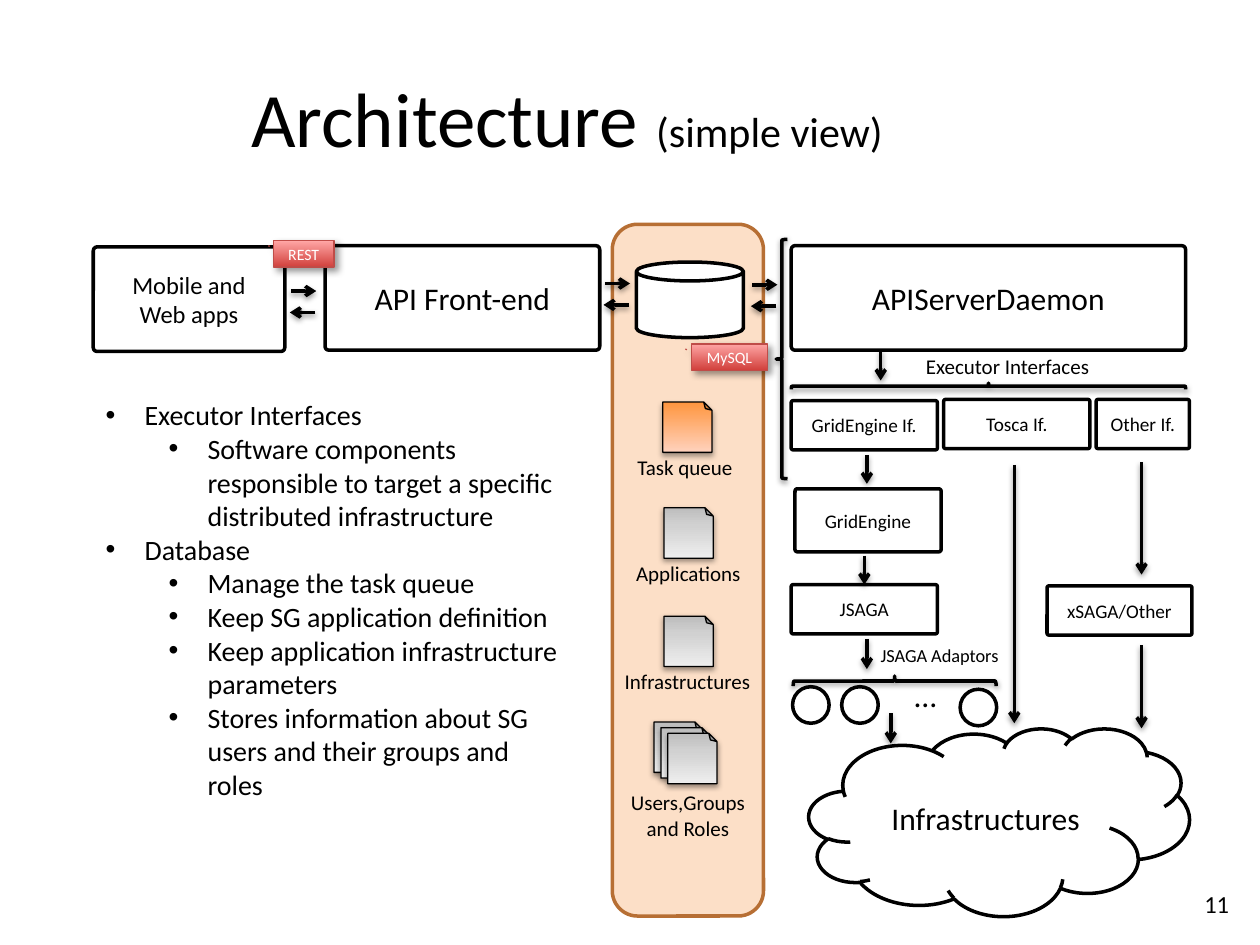
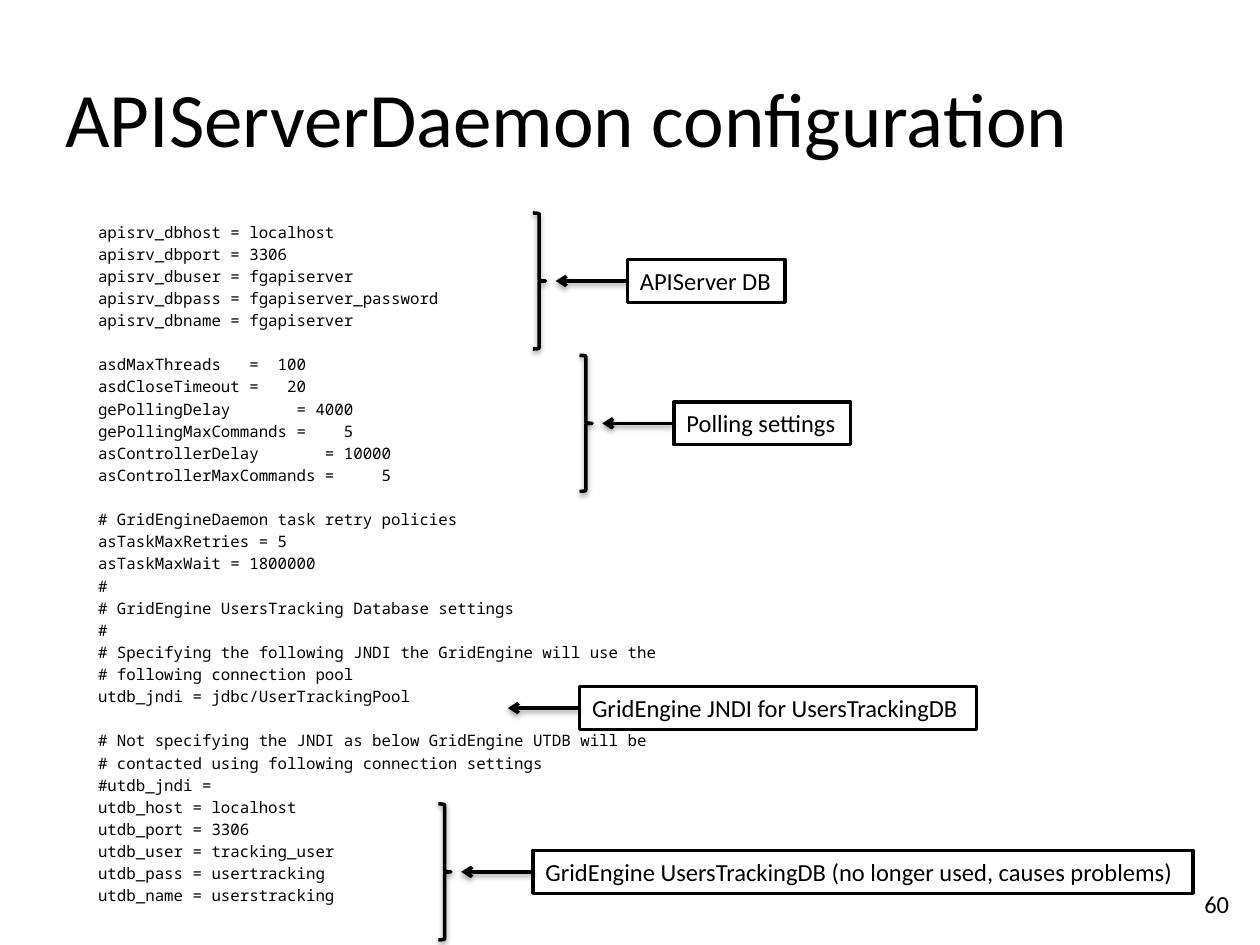
from lxml import etree
from pptx import Presentation
from pptx.dml.color import RGBColor
from pptx.enum.shapes import MSO_CONNECTOR, MSO_SHAPE
from pptx.enum.text import MSO_ANCHOR, MSO_AUTO_SIZE, PP_ALIGN
from pptx.oxml.ns import qn
from pptx.util import Inches, Pt

STRAIGHT = MSO_CONNECTOR.STRAIGHT
RECT, ROUNDED, OVAL = MSO_SHAPE.RECTANGLE, MSO_SHAPE.ROUNDED_RECTANGLE, MSO_SHAPE.OVAL
CAN, CLOUD, BRACE = MSO_SHAPE.CAN, MSO_SHAPE.CLOUD, MSO_SHAPE.LEFT_BRACE
CALLOUT, FOLDED = MSO_SHAPE.LINE_CALLOUT_1, MSO_SHAPE.FOLDED_CORNER
LEFT, CENTER = PP_ALIGN.LEFT, PP_ALIGN.CENTER
TOP, MIDDLE = MSO_ANCHOR.TOP, MSO_ANCHOR.MIDDLE
GROW = MSO_AUTO_SIZE.SHAPE_TO_FIT_TEXT

COLORS = {
    "ink": "000000", "paper": "FFFFFF",
    "store": "F79646", "store_edge": "B76F34", "tag_edge": "BF4C48",
}
# Gradients run from bottom to top: (position in percent, colour)
TAG_RED = [(0, "D1403C"), (100, "FFA6A5")]
QUEUE_ORANGE = [(0, "FF953E"), (100, "FFD2BD")]
RECORD_GREY = [(0, "BDBDBD"), (35, "D1D1D1"), (100, "EEEEEE")]
# Shadows: opacity in percent, blur and distance in points, direction in degrees
LINE_SHADOW = (38, 3.1, 1.6, 90)
QUEUE_SHADOW = (35, 3.1, 1.8, 90)
TAG_SHADOW = (40, 4, 3, 45)

BODY_FONT, CODE_FONT = "Calibri", "Noto Sans Mono"
CODE_PITCH = Pt(12.65)

BULLETS = [
    (0, "Executor Interfaces"),
    (1, "Software components responsible to target a specific distributed infrastructure"),
    (0, "Database"),
    (1, "Manage the task queue"),
    (1, "Keep SG application definition"),
    (1, "Keep application infrastructure parameters"),
    (1, "Stores information about SG users and their groups and roles"),
]

CONFIG_BLOCKS = [
    """apisrv_dbhost = localhost
apisrv_dbport = 3306
apisrv_dbuser = fgapiserver
apisrv_dbpass = fgapiserver_password
apisrv_dbname = fgapiserver""",
    """asdMaxThreads   =  100
asdCloseTimeout =   20
gePollingDelay       = 4000
gePollingMaxCommands =    5
asControllerDelay       = 10000
asControllerMaxCommands =     5""",
    """# GridEngineDaemon task retry policies
asTaskMaxRetries = 5
asTaskMaxWait = 1800000
#
# GridEngine UsersTracking Database settings
#
# Specifying the following JNDI the GridEngine will use the
# following connection pool
utdb_jndi = jdbc/UserTrackingPool""",
    """# Not specifying the JNDI as below GridEngine UTDB will be
# contacted using following connection settings
#utdb_jndi =
utdb_host = localhost
utdb_port = 3306
utdb_user = tracking_user
utdb_pass = usertracking
utdb_name = userstracking""",
]


def rgb(name):
    return RGBColor.from_string(COLORS[name])


def sub(parent, tag, **attributes):
    return etree.SubElement(parent, qn(tag), {k: str(v) for k, v in attributes.items()})


def inches(*lengths):
    return [Inches(length) for length in lengths]


def put_text(frame, paragraphs, size=12, font=BODY_FONT, color="ink", align=LEFT,
             anchor=TOP, wrap=True, grow=False):
    """Fill a frame; a paragraph is a string or a list of (text, size) runs."""
    frame.word_wrap = wrap
    frame.vertical_anchor = anchor
    if grow:
        frame.auto_size = GROW
    for number, content in enumerate(paragraphs):
        paragraph = frame.add_paragraph() if number else frame.paragraphs[0]
        paragraph.alignment = align
        runs = [(content, size)] if isinstance(content, str) else content
        for text, run_size in runs:
            run = paragraph.add_run()
            run.text = text
            run.font.size = Pt(run_size)
            run.font.name = font
            run.font.color.rgb = rgb(color)


def text_box(slide, at, *paragraphs, **style):
    frame = slide.shapes.add_textbox(*inches(*at)).text_frame
    put_text(frame, paragraphs, **style)
    return frame


def label(slide, at, *paragraphs, **style):
    text_box(slide, at, *paragraphs, wrap=False, grow=True, **style)


def add_shadow(effects, shadow):
    opacity, blur, distance, direction = shadow
    outer = sub(effects, "a:outerShdw", blurRad=Pt(blur), dist=Pt(distance),
                dir=direction * 60000, rotWithShape=0)
    sub(sub(outer, "a:srgbClr", val=COLORS["ink"]), "a:alpha", val=opacity * 1000)


def add_gradient(shape, stops):
    shape.fill.gradient()
    shape.fill.gradient_angle = 90
    stop_list = shape._element.spPr.find(".//" + qn("a:gsLst"))
    for stop in list(stop_list):
        stop_list.remove(stop)
    for position, color in stops:
        sub(sub(stop_list, "a:gs", pos=position * 1000), "a:srgbClr", val=color)


def outlined(slide, kind, at, fill="paper", edge="ink", width=2, gradient=None,
             shadow=None, rotation=0, flip=False, adjustments=()):
    shape = slide.shapes.add_shape(kind, *inches(*at))
    for index, value in enumerate(adjustments):
        shape.adjustments[index] = value
    if gradient:
        add_gradient(shape, gradient)
    elif fill:
        shape.fill.solid()
        shape.fill.fore_color.rgb = rgb(fill)
    else:
        shape.fill.background()
    shape.line.color.rgb = rgb(edge)
    shape.line.width = Pt(width)
    shape.rotation = rotation
    if flip:
        shape._element.spPr.find(qn("a:xfrm")).set("flipH", "1")
    shape.shadow.inherit = False
    if shadow:
        add_shadow(shape._element.spPr.find(qn("a:effectLst")), shadow)
    return shape


def component(slide, at, *lines, size=11, kind=ROUNDED):
    corner = (0.037,) if kind == ROUNDED else ()
    shape = outlined(slide, kind, at, adjustments=corner)
    put_text(shape.text_frame, lines, size=size, align=CENTER, anchor=MIDDLE)
    return shape


def tag(slide, at, text):
    shape = outlined(slide, CALLOUT, at, gradient=TAG_RED, edge="tag_edge", width=0.75,
                     shadow=TAG_SHADOW, adjustments=(0.188, -0.083, 0.222, -0.065))
    put_text(shape.text_frame, [text], size=9, color="paper", align=CENTER, anchor=MIDDLE)


def record(slide, left, top, gradient=RECORD_GREY, shadow=LINE_SHADOW):
    outlined(slide, FOLDED, (left, top, 0.39, 0.4), gradient=gradient, width=0.75,
             shadow=shadow, rotation=180, flip=True)


def brace(slide, at, **placement):
    outlined(slide, BRACE, at, fill=None, shadow=LINE_SHADOW, **placement)


def arrow(slide, x1, y1, x2, y2):
    connector = slide.shapes.add_connector(STRAIGHT, *inches(x1, y1, x2, y2))
    connector.line.color.rgb = rgb("ink")
    connector.line.width = Pt(2)
    properties = connector._element.spPr
    sub(properties.find(qn("a:ln")), "a:tailEnd", type="arrow")
    add_shadow(sub(properties, "a:effectLst"), LINE_SHADOW)
    return connector


def exchange(slide, left, y):
    """A pair of short arrows, there and back."""
    arrow(slide, left, y, left + 0.2, y)
    arrow(slide, left + 0.19, y + 0.17, left - 0.01, y + 0.17)


def bullet_list(slide, at, items):
    frame = text_box(slide, at, *[text for _, text in items], size=16, grow=True)
    for paragraph, (level, _) in zip(frame.paragraphs, items):
        paragraph.level = level
        properties = paragraph._p.get_or_add_pPr()
        properties.set("marL", str(Inches(0.31 + 0.5 * level)))
        properties.set("indent", str(Inches(-0.31)))
        sub(properties, "a:buFont", typeface="Arial")
        sub(properties, "a:buChar", char="•")


def annotation(slide, left, middle, width, text, braced=True):
    """A boxed note whose arrow points left, to a brace or a line of code."""
    note = outlined(slide, RECT, (left, middle - 0.17, width, 0.34))
    put_text(note.text_frame, [text], size=14, wrap=False, grow=True)
    arrow(slide, left, middle, left - 0.57, middle).begin_connect(note, 1)
    if braced:
        brace(slide, (left - 0.75, middle - 0.54, 0.1, 1.08), flip=True)


def new_slide(deck, title, number):
    slide = deck.slides.add_slide(deck.slide_layouts[6])
    text_box(slide, (0, 0.3, 9, 1.25), title, size=44, align=CENTER, anchor=MIDDLE)
    label(slide, (9.46, 7.01, 0.4, 0.34), str(number), size=14)
    return slide


def architecture_slide(deck):
    slide = new_slide(deck, [("Architecture ", 44), ("(simple view)", 24)], 11)

    # Database column
    store = outlined(slide, ROUNDED, (4.86, 1.78, 1.2, 5.49), "store", "store_edge")
    store_color = store._element.spPr.find(qn("a:solidFill")).find(qn("a:srgbClr"))
    sub(store_color, "a:alpha", val=30000)
    outlined(slide, CAN, (5.05, 2.08, 0.85, 0.6))
    record(slide, 5.26, 3.19, QUEUE_ORANGE, QUEUE_SHADOW)
    label(slide, (4.96, 3.56, 0.98, 0.3), "Task queue")
    record(slide, 5.27, 4.03)
    label(slide, (4.95, 4.4, 1.04, 0.3), "Applications")
    record(slide, 5.27, 4.89)
    label(slide, (4.86, 5.26, 1.23, 0.3), "Infrastructures")
    for layer in range(3):
        record(slide, 5.19 + 0.055 * layer, 5.73 + 0.045 * layer)
    label(slide, (4.88, 6.22, 1.16, 0.5), "Users,Groups", "and Roles", align=CENTER)

    # Main components
    component(slide, (0.74, 1.96, 1.52, 0.83), "Mobile and", "Web apps", size=14)
    component(slide, (2.58, 1.95, 2.18, 0.83), "API Front-end", size=18)
    component(slide, (6.28, 1.95, 3.13, 0.83), "APIServerDaemon", size=18)
    for left, y in [(2.31, 2.31), (4.8, 2.25), (5.97, 2.26)]:
        exchange(slide, left, y)

    # Executor interfaces and the layers below them
    component(slide, (6.28, 3.18, 1.16, 0.39), "GridEngine If.")
    component(slide, (7.49, 3.17, 1.16, 0.39), "Tosca If.")
    component(slide, (8.7, 3.17, 0.74, 0.39), "Other If.")
    component(slide, (6.31, 3.88, 1.16, 0.5), "GridEngine")
    jsaga = component(slide, (6.28, 4.64, 1.16, 0.39), "JSAGA")
    component(slide, (8.31, 4.65, 1.15, 0.39), "xSAGA/Other")
    component(slide, (6.42, 5.78, 3.02, 1.49), "Infrastructures", size=18, kind=CLOUD)
    label(slide, (7.25, 2.76, 1.53, 0.3), "Executor Interfaces")
    label(slide, (6.89, 5.06, 1.21, 0.29), "JSAGA Adaptors", size=10.5)

    # Adaptors
    for left, top in [(6.29, 5.45), (6.68, 5.45), (7.62, 5.47)]:
        outlined(slide, OVAL, (left, top, 0.29, 0.29))
    label(slide, (7.16, 5.32, 0.38, 0.4), "…", size=18)

    # Downward flow: x, start, end
    for x, start, end in [(6.99, 2.78, 3.02), (6.88, 3.61, 3.84), (6.88, 5.07, 5.31),
                          (7.07, 5.66, 5.9), (8.05, 3.69, 5.74),
                          (9.06, 3.67, 4.56), (9.06, 5.12, 5.78)]:
        arrow(slide, x, start, x, end)
    arrow(slide, 6.86, 4.41, 6.86, 4.64).end_connect(jsaga, 0)

    # Braces and protocol tags
    brace(slide, (7.82, 1.5, 0.05, 3.13), rotation=90)
    brace(slide, (7.06, 4.6, 0.08, 1.61), rotation=90)
    brace(slide, (6.16, 1.9, 0.09, 1.9))
    tag(slide, (2.17, 1.91, 0.48, 0.21), "REST")
    tag(slide, (5.49, 2.73, 0.6, 0.21), "MySQL")

    bullet_list(slide, (0.74, 3.11, 3.8, 3.33), BULLETS)


def configuration_slide(deck):
    slide = new_slide(deck, "APIServerDaemon configuration", 60)

    # Configuration file, one blank line's height between blocks
    blocks = [block.splitlines() for block in CONFIG_BLOCKS]
    code = text_box(slide, (0.68, 1.69, 9, 4.95), *sum(blocks, []), size=9, font=CODE_FONT)
    for paragraph in code.paragraphs:
        paragraph.line_spacing = CODE_PITCH
    first_line = 0
    for block in blocks[:-1]:
        first_line += len(block)
        code.paragraphs[first_line].space_before = CODE_PITCH

    # Notes on the settings
    annotation(slide, 4.98, 2.23, 1.25, "APIServer DB")
    annotation(slide, 5.35, 3.36, 1.4, "Polling settings")
    annotation(slide, 4.6, 5.62, 3.15, "GridEngine JNDI for UsersTrackingDB", braced=False)
    annotation(slide, 4.23, 6.92, 5.24,
               "GridEngine UsersTrackingDB (no longer used, causes problems)")


def main():
    deck = Presentation()
    deck.slide_width, deck.slide_height = inches(10, 7.5)
    architecture_slide(deck)
    configuration_slide(deck)
    deck.save("out.pptx")


if __name__ == "__main__":
    main()
